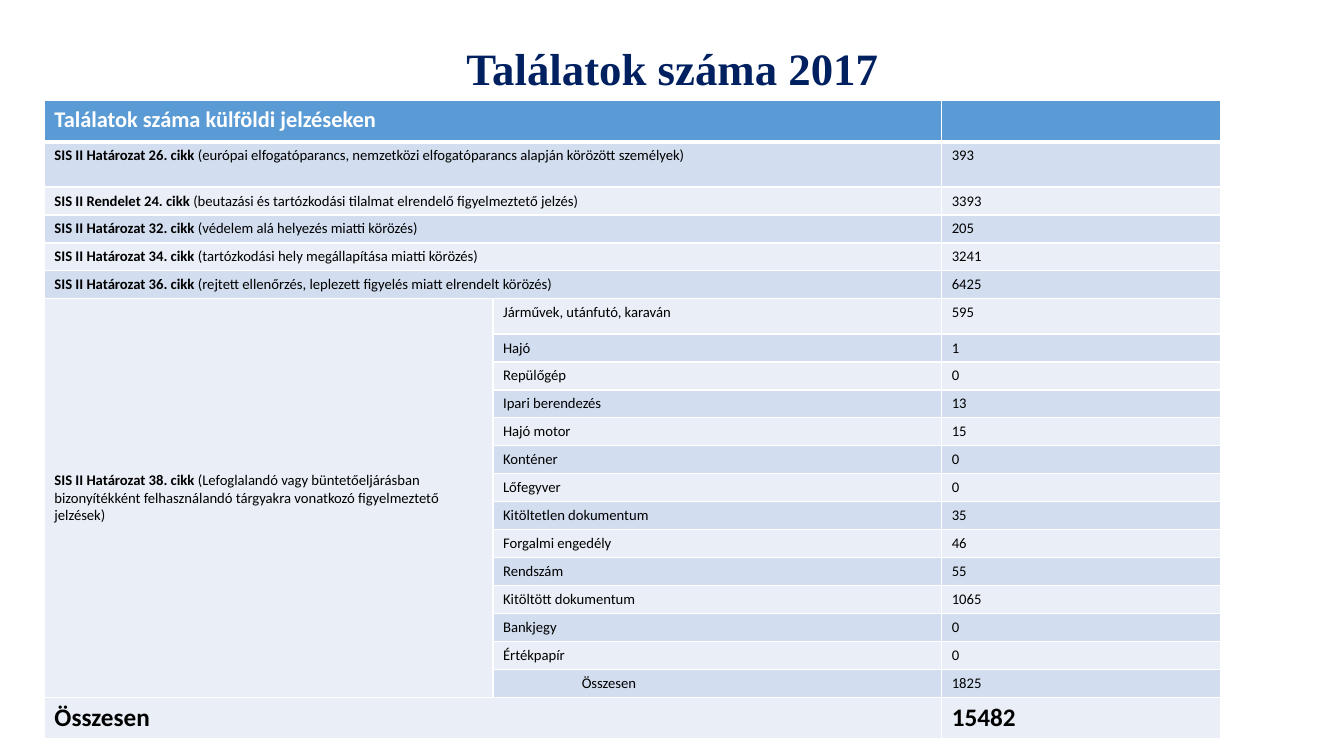
from pptx import Presentation
from pptx.dml.color import RGBColor
from pptx.enum.text import MSO_ANCHOR, PP_ALIGN
from pptx.oxml import parse_xml
from pptx.oxml.ns import nsdecls
from pptx.util import Inches, Pt

HEADER_FILL, DARK_BAND, LIGHT_BAND = "5B9BD5", "D2DEEF", "EAEFF7"
WHITE, BLACK, NAVY = "FFFFFF", "000000", "002060"

BODY = {"name": "Calibri", "size": Pt(10.5), "bold": False}
BODY_BOLD = {**BODY, "bold": True}
HEADING = {**BODY_BOLD, "size": Pt(16)}
TOTAL = {**BODY_BOLD, "size": Pt(18)}
TITLE = {"name": "Times New Roman", "size": Pt(32), "bold": True}

# Articles: bold reference, explanation, number of hits
ARTICLES = [
    ("SIS II Határozat 26. cikk ",
     "(európai elfogatóparancs, nemzetközi elfogatóparancs alapján körözött személyek)", 393),
    ("SIS II Rendelet 24. cikk ",
     "(beutazási és tartózkodási tilalmat elrendelő figyelmeztető jelzés)", 3393),
    ("SIS II Határozat 32. cikk ", "(védelem alá helyezés miatti körözés)", 205),
    ("SIS II Határozat 34. cikk ", "(tartózkodási hely megállapítása miatti körözés)", 3241),
    ("SIS II Határozat 36. cikk ",
     "(rejtett ellenőrzés, leplezett figyelés miatt elrendelt körözés)", 6425),
]
# Object categories of article 38
OBJECTS = [
    ("Járművek, utánfutó, karaván", 595), ("Hajó", 1), ("Repülőgép", 0),
    ("Ipari berendezés", 13), ("Hajó motor", 15), ("Konténer", 0),
    ("Lőfegyver", 0), ("Kitöltetlen dokumentum", 35), ("Forgalmi engedély", 46),
    ("Rendszám", 55), ("Kitöltött dokumentum", 1065), ("Bankjegy", 0),
    ("Értékpapír", 0), ("Összesen", 1825),
]
FIRST_OBJECT = len(ARTICLES) + 1
TOTAL_ROW = FIRST_OBJECT + len(OBJECTS)
COLUMN_WIDTHS = [4.45, 4.45, 2.77]
ROW_HEIGHT = 0.27
SPECIAL_HEIGHTS = {0: 0.4, 1: 0.45, FIRST_OBJECT: 0.35, TOTAL_ROW: 0.4}


def color(hex_value):
    return RGBColor.from_string(hex_value)


def add_run(paragraph, text, font_format, hex_value=BLACK):
    run = paragraph.add_run()
    run.text = str(text)
    for attribute, value in font_format.items():
        setattr(run.font, attribute, value)
    run.font.color.rgb = color(hex_value)


def write(cell, *parts, hex_value=BLACK):
    for text, font_format in parts:
        add_run(cell.text_frame.paragraphs[0], text, font_format, hex_value)


def set_borders(cell, top, bottom):
    properties = cell._tc.get_or_add_tcPr()
    for side, width in {"L": 1, "R": 1, "T": top, "B": bottom}.items():
        properties.append(parse_xml(
            f'<a:ln{side} {nsdecls("a")} w="{Pt(width)}"><a:solidFill>'
            f'<a:srgbClr val="{WHITE}"/></a:solidFill></a:ln{side}>'))


def format_grid(hits):
    for column, width in zip(hits.columns, COLUMN_WIDTHS):
        column.width = Inches(width)
    for number, row in enumerate(hits.rows):
        row.height = Inches(SPECIAL_HEIGHTS.get(number, ROW_HEIGHT))
        band = DARK_BAND if number % 2 else LIGHT_BAND
        for column, cell in enumerate(row.cells):
            set_borders(cell, 3 if number == 1 else 1, 3 if number == 0 else 1)
            cell.fill.solid()
            # The article 38 cell keeps one colour down all its rows
            in_article_38 = column == 0 and number >= FIRST_OBJECT
            fill = HEADER_FILL if number == 0 else LIGHT_BAND if in_article_38 else band
            cell.fill.fore_color.rgb = color(fill)


def merge_cells(hits):
    for number in [*range(FIRST_OBJECT), TOTAL_ROW]:
        hits.cell(number, 0).merge(hits.cell(number, 1))
    hits.cell(FIRST_OBJECT, 0).merge(hits.cell(TOTAL_ROW - 1, 0))


def fill_table(hits):
    # Header and articles
    write(hits.cell(0, 0), ("Találatok száma külföldi jelzéseken", HEADING), hex_value=WHITE)
    for number, (article, explanation, count) in enumerate(ARTICLES, 1):
        write(hits.cell(number, 0), (article, BODY_BOLD), (explanation, BODY))
        write(hits.cell(number, 2), (count, BODY))

    # Article 38 and its objects
    article_38 = hits.cell(FIRST_OBJECT, 0)
    article_38.vertical_anchor = MSO_ANCHOR.MIDDLE
    write(article_38, ("SIS II Határozat 38. cikk ", BODY_BOLD),
          ("(Lefoglalandó vagy büntetőeljárásban bizonyítékként felhasználandó "
           "tárgyakra vonatkozó figyelmeztető jelzések)", BODY))
    for number, (category, count) in enumerate(OBJECTS, FIRST_OBJECT):
        write(hits.cell(number, 1), (category, BODY))
        write(hits.cell(number, 2), (count, BODY))
    hits.cell(TOTAL_ROW - 1, 1).margin_left = Inches(0.88)

    # Grand total
    write(hits.cell(TOTAL_ROW, 0), ("Összesen", TOTAL))
    write(hits.cell(TOTAL_ROW, 2), (15482, TOTAL))


def add_title(slide, text):
    title = slide.shapes.title
    title.left, title.top = Inches(0.92), Inches(0.4)
    title.width, title.height = Inches(11.5), Inches(0.6)
    title.text_frame.vertical_anchor = MSO_ANCHOR.MIDDLE
    heading = title.text_frame.paragraphs[0]
    heading.alignment = PP_ALIGN.CENTER
    heading.line_spacing = 0.9
    add_run(heading, text, TITLE, NAVY)


def add_hits_table(slide):
    hits = slide.shapes.add_table(
        TOTAL_ROW + 1, len(COLUMN_WIDTHS), Inches(0.44), Inches(1),
        Inches(sum(COLUMN_WIDTHS)), Inches(6.28)).table
    format_grid(hits)
    merge_cells(hits)
    fill_table(hits)


def main():
    presentation = Presentation()
    presentation.slide_width = Inches(13.33)
    presentation.slide_height = Inches(7.5)
    slide = presentation.slides.add_slide(presentation.slide_layouts[5])
    add_title(slide, "Találatok száma 2017")
    add_hits_table(slide)
    presentation.save("out.pptx")


if __name__ == "__main__":
    main()
